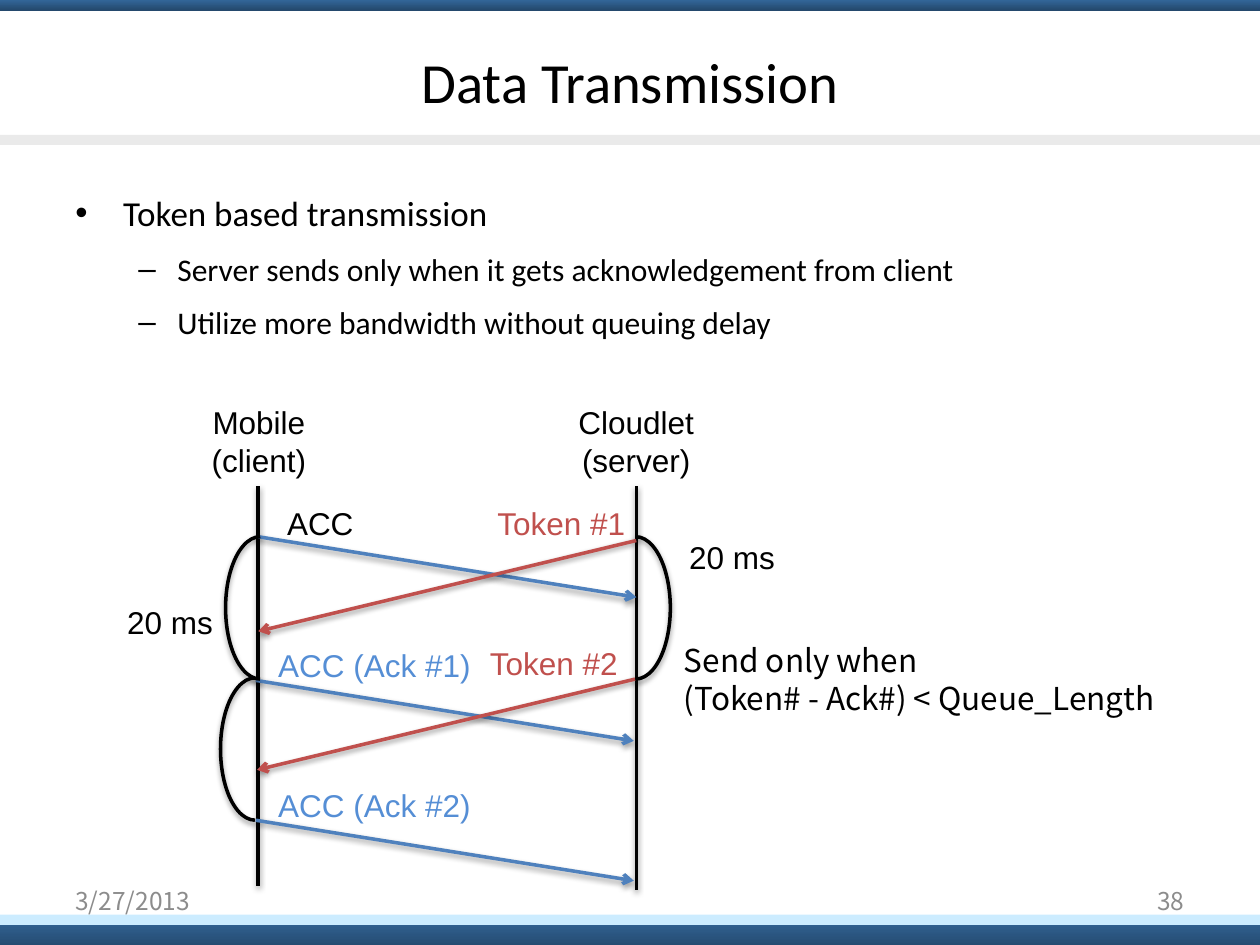
from lxml.etree import SubElement as Sub
from pptx import Presentation
from pptx.dml.color import RGBColor
from pptx.enum.shapes import MSO_CONNECTOR as Conn, MSO_SHAPE as Shape
from pptx.enum.text import MSO_ANCHOR as Anchor, MSO_AUTO_SIZE as Auto, PP_ALIGN as Align
from pptx.oxml.ns import qn
from pptx.util import Inches, Pt

BLACK = RGBColor(0x00, 0x00, 0x00)
BLUE = RGBColor(0x4F, 0x81, 0xBD)
SKY = RGBColor(0x55, 0x8E, 0xD5)
RED = RGBColor(0xC0, 0x50, 0x4D)
GREY = RGBColor(0x8C, 0x8C, 0x8C)
PALE = RGBColor(0xEA, 0xEA, 0xEA)
ICE = RGBColor(0xCC, 0xEC, 0xFF)
NAVY = (RGBColor(0x33, 0x66, 0x99), RGBColor(0x24, 0x49, 0x6D))
CJK = "Noto Sans CJK KR"


def assign(item, form):
    """Set each attribute named in a dict of format values."""
    for name, value in form.items():
        setattr(item, name, value)


def style(para, words, size, face, color):
    """Fill a paragraph and format its runs."""
    para.text = words
    for run in para.runs:
        assign(run.font, {"size": Pt(size), "name": face})
        run.font.color.rgb = color


def write(slide, box, words, size=18, face="Arial", color=BLACK, align=Align.LEFT, **frame):
    """Place one paragraph of text in a box."""
    text = slide.shapes.add_textbox(*map(Inches, box)).text_frame
    assign(text, {"word_wrap": True, **frame})
    text.paragraphs[0].alignment = align
    style(text.paragraphs[0], words, size, face, color)


def label(slide, box, words, **form):
    """Place unwrapped text that sizes its own box."""
    write(slide, box, words, word_wrap=False, auto_size=Auto.SHAPE_TO_FIT_TEXT, **form)


def shade(shape):
    """Give a shape a soft shadow straight below it."""
    effect = Sub(shape._element.spPr, qn("a:effectLst"))
    drop = Sub(effect, qn("a:outerShdw"), blurRad="40000", dist="20000", dir="5400000", rotWithShape="0")
    tone = Sub(drop, qn("a:srgbClr"), val="000000")
    Sub(tone, qn("a:alpha"), val="38000")


def link(slide, start, end, color=BLACK, arrow=False):
    """Draw a shadowed line, with an arrowhead on request."""
    line = slide.shapes.add_connector(Conn.STRAIGHT, *map(Inches, start + end))
    line.line.width = Pt(2)
    line.line.color.rgb = color
    if arrow:
        Sub(line.line._get_or_add_ln(), qn("a:tailEnd"), type="arrow")
    shade(line)


def curve(slide, box, flip=False):
    """Draw a half-ellipse that spans one time interval."""
    arc = slide.shapes.add_shape(Shape.ARC, *map(Inches, box))
    arc.adjustments[0], arc.adjustments[1] = 162, 53.9
    arc.fill.background()
    arc.line.width = Pt(2)
    arc.line.color.rgb = BLACK
    if flip:
        arc._element.spPr.xfrm.set("flipH", "1")
    shade(arc)


def band(slide, box, *colors):
    """Draw a plain or vertically shaded strip."""
    bar = slide.shapes.add_shape(Shape.RECTANGLE, *map(Inches, box))
    bar.shadow.inherit = False
    bar.line.fill.background()
    if len(colors) == 1:
        bar.fill.solid()
        bar.fill.fore_color.rgb = colors[0]
        return
    bar.fill.gradient()
    bar.fill.gradient_angle = 270
    for stop, color in zip(bar.fill.gradient_stops, colors):
        stop.color.rgb = color


def frame(slide, box):
    """Draw the strips across the slide."""
    left, top, width, _ = box
    for y, tall, colors in ((7.28, 0.25, NAVY), (7.26, 0.08, [ICE]), (1.07, 0.08, [PALE]), (0, 0.08, NAVY)):
        band(slide, (left, top + y, width, tall), *colors)


def points(slide, box, items):
    """Write a bulleted list of two levels."""
    text = slide.shapes.add_textbox(*map(Inches, box)).text_frame
    text.word_wrap = True
    kinds = ((20, 0.38, -0.38, "•"), (18, 0.81, -0.31, "–"))
    for i, (level, words) in enumerate(items):
        size, margin, indent, mark = kinds[level]
        para = text.add_paragraph() if i else text.paragraphs[0]
        assign(para, {"level": level, "line_spacing": 1.25, "space_before": Pt(size * 0.2)})
        style(para, words, size, "Calibri", BLACK)
        props = para._p.get_or_add_pPr()
        props.set("marL", str(Inches(margin)))
        props.set("indent", str(Inches(indent)))
        Sub(props, qn("a:buFont"), typeface="Arial")
        Sub(props, qn("a:buChar"), char=mark)


def chart(slide, box):
    """Draw the message exchange between client and server."""
    x, y, _, _ = box

    def at(left, top, *size):
        return (x + left, y + top, *size)

    for left, tall in ((1.14, 3.88), (4.14, 3.91)):
        link(slide, at(left, 0.71), at(left, tall))
    for spot, words in ((at(0.65, 0, 0.99, 0.71), "Mobile\n(client)"),
                        (at(3.56, 0, 1.16, 0.71), "Cloudlet\n(server)")):
        label(slide, spot, words, align=Align.CENTER)
    for left, top in ((1.14, 1.11), (1.12, 2.25), (1.12, 3.36)):
        link(slide, at(left, top), at(left + 3, top + 0.48), BLUE, True)
    for left, top in ((4.14, 1.14), (4.13, 2.24)):
        link(slide, at(left, top), at(left - 3, top + 0.72), RED, True)
    for left, top, flip in ((0.88, 1.11, True), (3.86, 1.11, False), (0.84, 2.23, True)):
        curve(slide, at(left, top, 0.55, 1.13), flip)
    for left, top, wide, words, color in (
        (1.27, 0.8, 0.73, "ACC", BLACK),
        (2.94, 0.8, 1.23, "Token #1", RED),
        (1.2, 1.93, 1.74, "ACC (Ack #1)", SKY),
        (2.88, 1.91, 1.23, "Token #2", RED),
        (1.2, 3.04, 1.74, "ACC (Ack #2)", SKY),
        (0, 1.59, 0.89, "20 ms", BLACK),
        (4.46, 1.07, 0.89, "20 ms", BLACK),
    ):
        label(slide, at(left, top, wide, 0.4), words, color=color)
    label(slide, at(4.42, 1.89, 4.02, 0.71), "Send only when\n(Token# - Ack#) < Queue_Length", face=CJK)


def footer(slide, box):
    """Write the date and the page number at the two ends."""
    left, top, width, tall = box
    part = 2.33
    for x, words, align in ((left, "3/27/2013", Align.LEFT), (left + width - part, "38", Align.RIGHT)):
        write(slide, (x, top, part, tall), words, 14, CJK, GREY, align, vertical_anchor=Anchor.MIDDLE)


def main():
    """Build and save the slide."""
    deck = Presentation()
    assign(deck, {"slide_width": Inches(10), "slide_height": Inches(7.5)})
    slide = deck.slides.add_slide(deck.slide_layouts[6])
    frame(slide, (0, 0, 10, 7.5))
    write(slide, (0.5, 0.3, 9, 0.69), "Data Transmission", 32.4, "Calibri",
          align=Align.CENTER, vertical_anchor=Anchor.MIDDLE)
    points(slide, (0.5, 1.39, 9, 1.53), (
        (0, "Token based transmission"),
        (1, "Server sends only when it gets acknowledgement from client"),
        (1, "Utilize more bandwidth without queuing delay"),
    ))
    chart(slide, (0.91, 3.15, 8.44, 3.91))
    footer(slide, (0.5, 6.95, 9, 0.4))
    deck.save("out.pptx")


if __name__ == "__main__":
    main()
